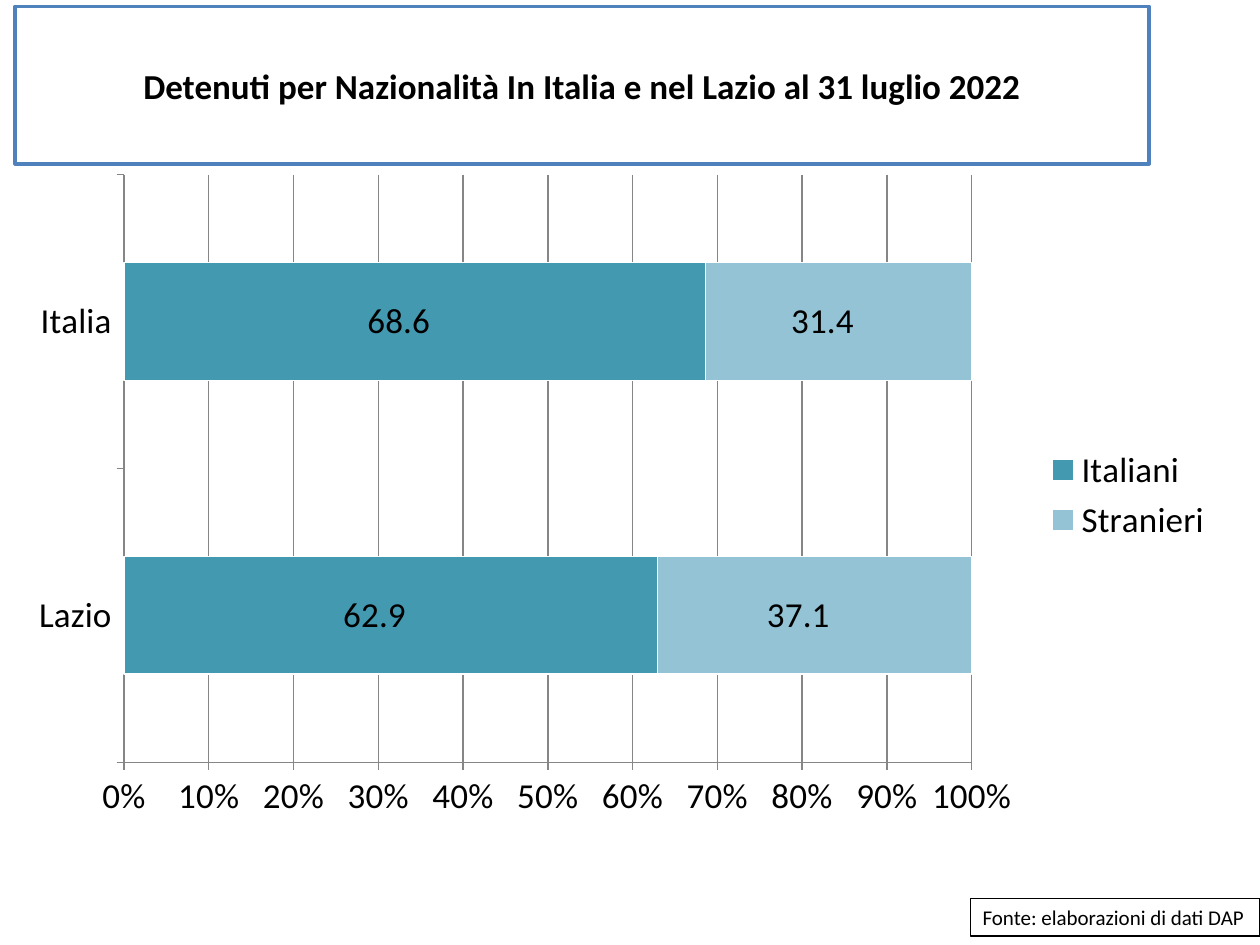
from lxml.etree import SubElement
from pptx import Presentation
from pptx.chart.data import CategoryChartData
from pptx.dml.color import RGBColor
from pptx.enum.chart import XL_CHART_TYPE as ChartType
from pptx.enum.chart import XL_LABEL_POSITION as LabelPosition
from pptx.enum.chart import XL_LEGEND_POSITION as LegendPosition
from pptx.enum.chart import XL_TICK_MARK as TickMark
from pptx.enum.shapes import MSO_SHAPE as Shape
from pptx.enum.text import MSO_ANCHOR as Anchor
from pptx.enum.text import MSO_AUTO_SIZE as AutoSize
from pptx.enum.text import PP_ALIGN as Align
from pptx.oxml.ns import qn
from pptx.util import Inches, Pt

SERIES = {"Italiani": ([62.9, 68.6], "4299B0"),
          "Stranieri": ([37.1, 31.4], "93C3D5")}
AXIS_GREY = "868686"
LEFT = Inches(0.12)


def color(hex_string):
    return RGBColor.from_string(hex_string)


def style_box(box, text, size, border, border_width, align, bold=False):
    box.fill.solid()
    box.fill.fore_color.rgb = color("FFFFFF")
    box.line.color.rgb = color(border)
    box.line.width = Pt(border_width)
    frame = box.text_frame
    frame.text = text
    frame.vertical_anchor = Anchor.MIDDLE
    paragraph = frame.paragraphs[0]
    paragraph.alignment = align
    font = paragraph.runs[0].font
    font.name, font.size, font.bold = "Calibri", Pt(size), bold
    font.color.rgb = color("000000")


prs = Presentation()
prs.slide_width, prs.slide_height = Inches(10), Inches(7.5)
slide = prs.slides.add_slide(prs.slide_layouts[5])

# Title
title = slide.shapes.title
title.left, title.top = LEFT, Inches(0.05)
title.width, title.height = Inches(9), Inches(1.25)
style_box(title, "Detenuti per Nazionalità In Italia e nel Lazio al 31 luglio 2022",
          20, "4F81BD", 2, Align.CENTER, bold=True)

# Source note
source = slide.shapes.add_shape(Shape.RECTANGLE, Inches(7.7), Inches(7.13),
                                Inches(2.3), Inches(0.3))
source.shadow.inherit = False
style_box(source, "Fonte: elaborazioni di dati DAP", 12, "000000", 0.75, Align.LEFT)
source.text_frame.word_wrap = False
source.text_frame.auto_size = AutoSize.SHAPE_TO_FIT_TEXT

# Chart
data = CategoryChartData(number_format="0.0")
data.categories = ["Lazio", "Italia"]
for name, (shares, _) in SERIES.items():
    data.add_series(name, shares)
chart = slide.shapes.add_chart(ChartType.BAR_STACKED_100, LEFT, Inches(1.28),
                               Inches(9.61), Inches(5.3), data).chart
chart.has_title = False
chart.font.name, chart.font.size = "Calibri", Pt(20)
chart.font.color.rgb = color("000000")
chart.has_legend = True
chart.legend.position = LegendPosition.RIGHT
chart.legend.include_in_layout = False

for axis in (chart.category_axis, chart.value_axis):
    axis.major_tick_mark = TickMark.OUTSIDE
    axis.minor_tick_mark = TickMark.NONE
    axis.format.line.color.rgb = color(AXIS_GREY)
percent = chart.value_axis
percent.minimum_scale, percent.maximum_scale, percent.major_unit = 0, 1, 0.1
percent.tick_labels.number_format = "0%"
percent.tick_labels.number_format_is_linked = False
percent.has_major_gridlines = True
percent.major_gridlines.format.line.color.rgb = color(AXIS_GREY)

plot = chart.plots[0]
plot.gap_width, plot.overlap = 150, 100
plot.vary_by_categories = False
for series, (_, fill) in zip(plot.series, SERIES.values()):
    series.format.fill.solid()
    series.format.fill.fore_color.rgb = color(fill)
    series.format.line.color.rgb = color("FFFFFF")
    series.format.line.width = Pt(0.75)
    labels = series.data_labels
    labels.show_value = True
    labels.position = LabelPosition.CENTER
    labels.number_format = "#,##0.0\\ _€_-"
    labels.number_format_is_linked = False

# Inner plot area, as shares of the chart
plot_area = chart.plots[0]._element.getparent()
layout = plot_area.find(qn("c:layout"))
if layout is None:
    layout = SubElement(plot_area, qn("c:layout"))
    plot_area.insert(0, layout)
manual = SubElement(layout, qn("c:manualLayout"))
for tag, value in (("layoutTarget", "inner"), ("xMode", "edge"), ("yMode", "edge"),
                   ("x", "0.09"), ("y", "0.02"), ("w", "0.7"), ("h", "0.88")):
    SubElement(manual, qn(f"c:{tag}")).set("val", value)

prs.save("out.pptx")
